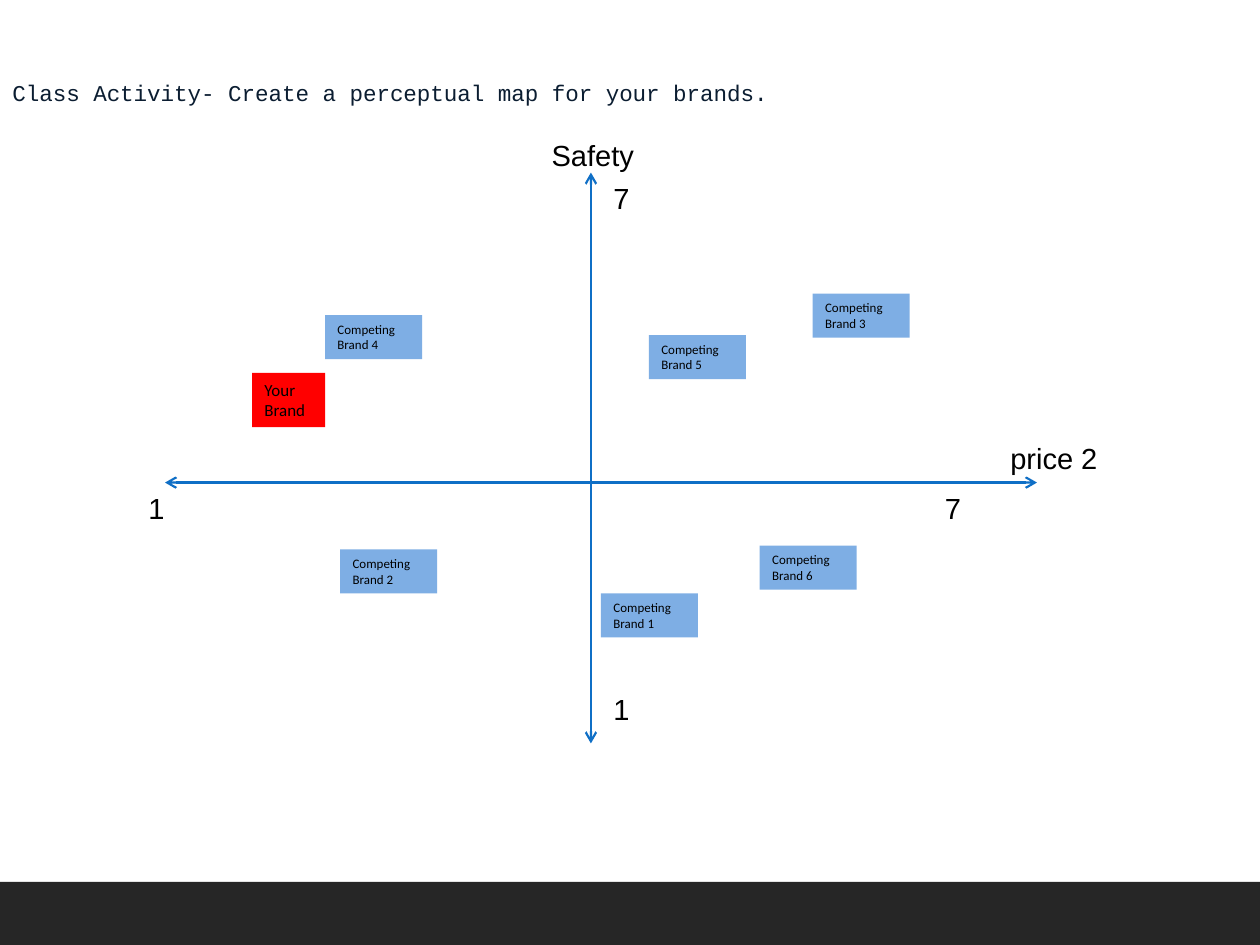
from lxml import etree
from pptx import Presentation
from pptx.dml.color import RGBColor
from pptx.enum.shapes import MSO_CONNECTOR, MSO_SHAPE
from pptx.enum.text import MSO_ANCHOR, PP_ALIGN
from pptx.oxml.ns import qn
from pptx.util import Inches, Pt

STRAIGHT = MSO_CONNECTOR.STRAIGHT
RECTANGLE = MSO_SHAPE.RECTANGLE
TOP = MSO_ANCHOR.TOP
LEFT = PP_ALIGN.LEFT

WIDTH, HEIGHT = 10, 7.5
COLORS = {
    "footer": "262626",
    "title": "0B1D31",
    "axis": "0F6FC6",
    "rival": "7EAEE4",
    "own": "FF0000",
    "text": "000000",
}

TITLE = "Class Activity- Create a perceptual map for your brands."
PRICE_Y, PRICE_ENDS = 3.83, (1.31, 8.23)
SAFETY_X, SAFETY_ENDS = 4.69, (1.37, 5.9)
SCALE_X, SCALE_Y = SAFETY_X + 0.08, PRICE_Y + 0.01
AXES = [
    (PRICE_ENDS[0], PRICE_Y, PRICE_ENDS[1], PRICE_Y),
    (SAFETY_X, SAFETY_ENDS[0], SAFETY_X, SAFETY_ENDS[1]),
]
AXIS_LABELS = [
    ("Safety", 4.28, 1.04, 1.49),
    ("price 2", 7.92, 3.45, 1.31),
    ("1", 1.08, SCALE_Y, 1.08),
    ("7", SCALE_X, 1.38, 1.08),
    ("7", 7.4, SCALE_Y, 1.08),
    ("1", SCALE_X, 5.44, 1.08),
]
RIVAL_POSITIONS = {
    6: (6.03, 4.33),
    1: (4.77, 4.71),
    2: (2.7, 4.36),
    3: (6.45, 2.33),
    4: (2.58, 2.5),
    5: (5.15, 2.66),
}
RIVAL_SIZE = (0.77, 0.35)
OWN_POSITION, OWN_SIZE = (2, 2.96), (0.58, 0.43)


def color(name):
    return RGBColor.from_string(COLORS[name])


def write(holder, wording, size, font, tint="text"):
    frame = holder.text_frame
    frame.word_wrap = True
    frame.vertical_anchor = TOP
    paragraph = frame.paragraphs[0]
    paragraph.text = wording
    paragraph.alignment = LEFT
    paragraph.font.size = Pt(size)
    paragraph.font.name = font
    paragraph.font.color.rgb = color(tint)
    return paragraph


def add_label(slide, wording, box, size, font, tint="text"):
    label = slide.shapes.add_textbox(*map(Inches, box))
    return write(label, wording, size, font, tint)


def add_block(slide, position, extent, fill):
    block = slide.shapes.add_shape(RECTANGLE, *map(Inches, position + extent))
    block.shadow.inherit = False
    block.fill.solid()
    block.fill.fore_color.rgb = color(fill)
    block.line.fill.background()
    return block


def add_axis(slide, ends):
    axis = slide.shapes.add_connector(STRAIGHT, *map(Inches, ends))
    axis.line.color.rgb = color("axis")
    axis.line.width = Pt(1.25)
    outline = axis.line._get_or_add_ln()
    for tip in ("a:headEnd", "a:tailEnd"):
        etree.SubElement(outline, qn(tip), type="arrow")
    etree.SubElement(axis._element.spPr, qn("a:effectLst"))


def main():
    """Build the perceptual map slide."""
    deck = Presentation()
    deck.slide_width, deck.slide_height = Inches(WIDTH), Inches(HEIGHT)
    slide = deck.slides.add_slide(deck.slide_layouts[6])

    add_block(slide, (0, HEIGHT - 0.5), (WIDTH, 0.5), "footer")
    title = add_label(slide, TITLE, (0, 0.6, 6.45, 0.46), 12.9, "Courier New", "title")
    title.line_spacing = 0.9
    for ends in AXES:
        add_axis(slide, ends)
    for wording, left, top, width in AXIS_LABELS:
        add_label(slide, wording, (left, top, width, 0.38), 16.6, "Arial")
    for number, position in RIVAL_POSITIONS.items():
        rival = add_block(slide, position, RIVAL_SIZE, "rival")
        write(rival, f"Competing Brand {number}", 7.4, "Calibri")
    own = add_block(slide, OWN_POSITION, OWN_SIZE, "own")
    write(own, "Your Brand", 9.7, "Calibri")

    deck.save("out.pptx")


if __name__ == "__main__":
    main()
